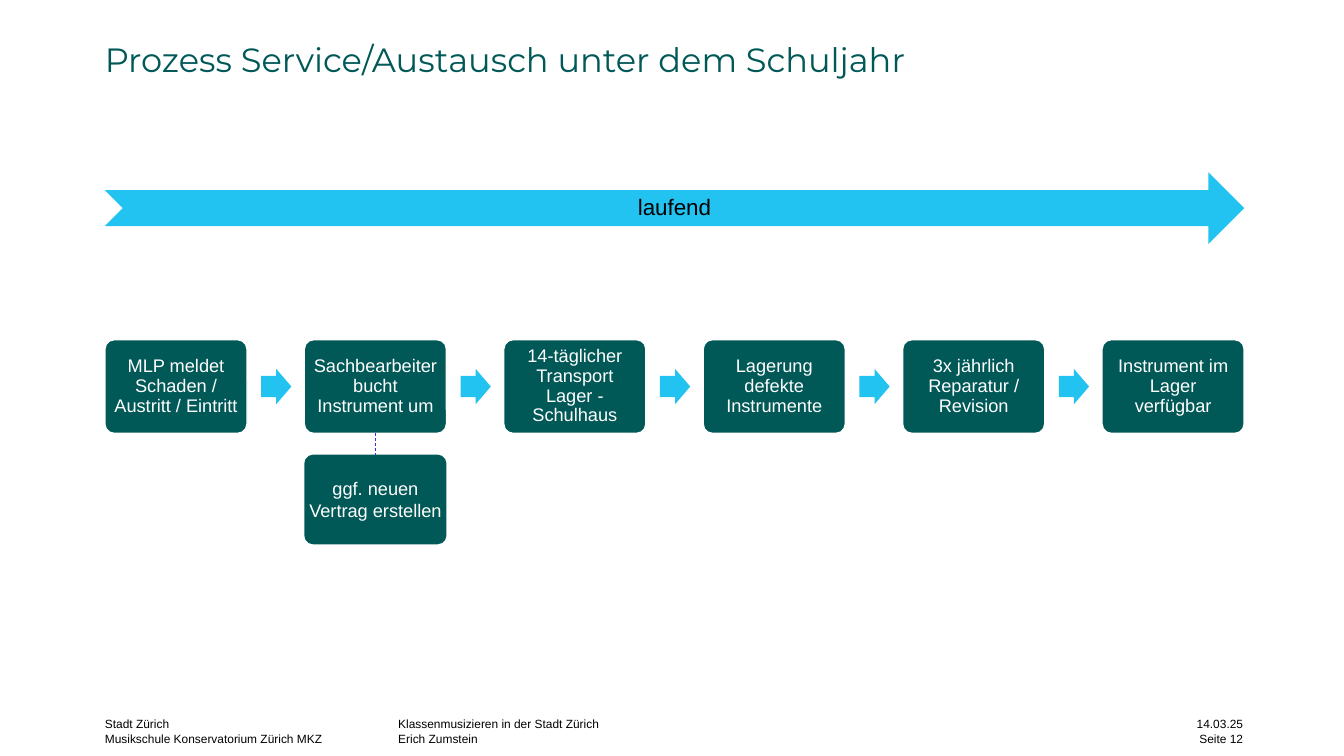
from lxml import etree
from pptx import Presentation
from pptx.dml.color import RGBColor
from pptx.enum.dml import MSO_LINE
from pptx.enum.shapes import MSO_CONNECTOR, MSO_SHAPE as Shape
from pptx.enum.text import MSO_ANCHOR as Anchor, PP_ALIGN as Align
from pptx.oxml.ns import qn
from pptx.util import Inches, Pt

COLORS = {"green": "005857", "cyan": "23C3F1", "violet": "3431DE",
          "white": "FFFFFF", "black": "000000"}
LEFT, WIDTH = 1.04, 11.3
STEP_W, STEP_H = 1.41, 0.93
STEPS = [
    "MLP meldet Schaden / Austritt / Eintritt",
    "Sachbearbeiter bucht Instrument um",
    "14-täglicher Transport Lager - Schulhaus",
    "Lagerung defekte Instrumente",
    "3x jährlich Reparatur / Revision",
    "Instrument im Lager verfügbar",
]
PITCH = (WIDTH - STEP_W) / (len(STEPS) - 1)


def rgb(name):
    return RGBColor.from_string(COLORS[name])


def write(sp, text, size, color, font="Arial", align=Align.LEFT,
          anchor=Anchor.TOP, spacing=None, inset=0, wrap=True):
    tf = sp.text_frame
    tf.text = text
    tf.word_wrap = wrap
    tf.vertical_anchor = anchor
    tf.margin_left = tf.margin_right = Inches(inset)
    tf.margin_top = tf.margin_bottom = Inches(inset)
    for p in tf.paragraphs:
        p.alignment = align
        p.line_spacing = spacing
        for r in p.runs:
            r.font.size = Pt(size)
            r.font.name = font
            r.font.color.rgb = rgb(color)


def add_text(slide, box, text, size, color, **style):
    sp = slide.shapes.add_textbox(*map(Inches, box))
    write(sp, text, size, color, **style)


def add_filled(slide, kind, box, fill, adjust=()):
    sp = slide.shapes.add_shape(kind, *map(Inches, box))
    sp.shadow.inherit = False
    sp.fill.solid()
    sp.fill.fore_color.rgb = rgb(fill)
    sp.line.fill.background()
    for i, value in enumerate(adjust):
        sp.adjustments[i] = value
    return sp


def add_box(slide, box, text, **style):
    sp = add_filled(slide, Shape.ROUNDED_RECTANGLE, box, "green", [0.1])
    write(sp, text, 13, "white", align=Align.CENTER, anchor=Anchor.MIDDLE, **style)
    return sp


def add_timeline(slide, box):
    sp = add_filled(slide, Shape.NOTCHED_RIGHT_ARROW, box, "cyan")
    write(sp, "laufend", 16, "black", align=Align.CENTER,
          anchor=Anchor.MIDDLE, spacing=0.9)


def add_process(slide, x, y):
    """Row of steps joined by arrows; returns the step boxes."""
    arrow_w, arrow_h = 0.3, 0.35
    boxes = []
    for i, text in enumerate(STEPS):
        step_x = x + i * PITCH
        sp = add_box(slide, (step_x, y, STEP_W, STEP_H), text,
                     spacing=0.9, inset=0.05)
        sp.line.color.rgb = rgb("white")
        sp.line.width = Pt(1)
        boxes.append(sp)
        if i < len(STEPS) - 1:
            arrow = (step_x + STEP_W + 0.14, y + (STEP_H - arrow_h) / 2,
                     arrow_w, arrow_h)
            add_filled(slide, Shape.RIGHT_ARROW, arrow, "cyan", [0.6, 0.5])
    return boxes


def add_contract_option(slide, step, box):
    """Optional extra task, hung below its step on a dashed line."""
    option = add_box(slide, box, "ggf. neuen Vertrag erstellen")
    link = slide.shapes.add_connector(MSO_CONNECTOR.STRAIGHT, 0, 0, 0, 0)
    link.begin_connect(step, 2)
    link.end_connect(option, 0)
    link.line.color.rgb = rgb("violet")
    link.line.width = Pt(0.5)
    link.line.dash_style = MSO_LINE.DASH
    etree.SubElement(link._element.spPr, qn("a:effectLst"))


def add_footer(slide, y, h):
    columns = [
        (3.95, 6.93, Align.LEFT, "Klassenmusizieren in der Stadt Zürich\nErich Zumstein"),
        (LEFT, 2.52, Align.LEFT, "Stadt Zürich\nMusikschule Konservatorium Zürich MKZ"),
        (11.23, 1.1, Align.RIGHT, "14.03.25\nSeite 12"),
    ]
    for x, w, align, text in columns:
        add_text(slide, (x, y, w, h), text, 8.5, "black", align=align,
                 spacing=Pt(10.5), wrap=False)


def main():
    prs = Presentation()
    prs.slide_width, prs.slide_height = Inches(13.33), Inches(7.5)
    slide = prs.slides.add_slide(prs.slide_layouts[6])
    add_footer(slide, 7.11, 0.39)
    add_text(slide, (LEFT, 0.33, WIDTH, 0.47),
             "Prozess Service/Austausch unter dem Schuljahr", 24, "green",
             font="Montserrat", spacing=1.13)
    steps = add_process(slide, LEFT, 3.37)
    add_contract_option(slide, steps[1], (LEFT + PITCH, 4.51, STEP_W, 0.89))
    add_timeline(slide, (LEFT, 1.71, WIDTH, 0.71))
    prs.save("out.pptx")


if __name__ == "__main__":
    main()
